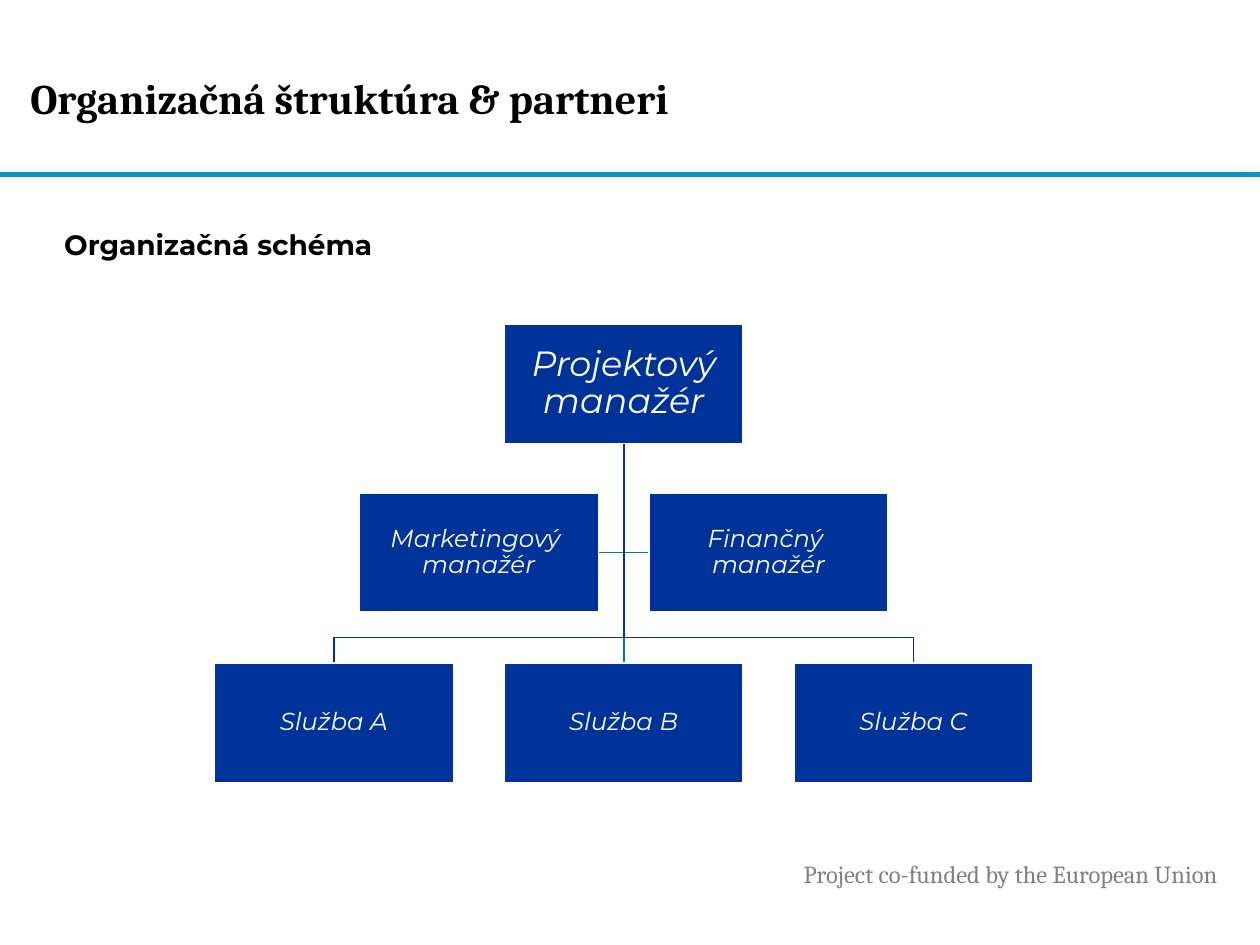
from dataclasses import dataclass

from lxml.etree import SubElement
from pptx import Presentation
from pptx.dml.color import RGBColor
from pptx.enum.shapes import MSO_CONNECTOR, MSO_SHAPE
from pptx.enum.text import MSO_ANCHOR, PP_ALIGN
from pptx.oxml.ns import qn
from pptx.util import Inches, Pt


@dataclass(frozen=True)
class Theme:
    serif: str = "Cambria"
    sans: str = "Montserrat"
    black: str = "000000"
    white: str = "FFFFFF"
    grey: str = "808080"
    navy: str = "003399"
    teal: str = "0078A9"
    rule_fill: str = "0C94B7"
    rule_line: str = "0096D3"
    title_size: int = 24
    lead_size: int = 20
    heading_size: int = 16
    text_size: int = 14


THEME = Theme()
NODE_WIDTH, NODE_HEIGHT = 1.9, 0.95
CENTER = 4.95
COLUMN_STEP = 2.3
LEAD_TOP, MANAGER_TOP, SERVICE_TOP = 2.57, 3.91, 5.26
LEAD_BOTTOM = LEAD_TOP + NODE_HEIGHT
BUS_Y = 5.06


def color(value):
    return RGBColor.from_string(value)


def style_text(frame, font, size, text_color, bold=False, italic=False):
    for para in frame.paragraphs:
        for span in para.runs:
            span.font.name = font
            span.font.size = Pt(size)
            span.font.color.rgb = color(text_color)
            span.font.bold = bold
            span.font.italic = italic


def set_margins(frame, horizontal, vertical):
    frame.margin_left = frame.margin_right = Inches(horizontal)
    frame.margin_top = frame.margin_bottom = Inches(vertical)


def set_line(shape, line_color):
    shape.line.color.rgb = color(line_color)
    shape.line.width = Pt(1)


def add_title(slide, text):
    title = slide.shapes.title
    title.left, title.top = Inches(0.24), Inches(0.18)
    title.width, title.height = Inches(7.54), Inches(1.19)
    frame = title.text_frame
    frame.text = text
    frame.vertical_anchor = MSO_ANCHOR.MIDDLE
    set_margins(frame, 0, 0)
    frame.paragraphs[0].alignment = PP_ALIGN.LEFT
    style_text(frame, THEME.serif, THEME.title_size, THEME.black, bold=True)


def add_text(slide, text, left, top, width, height):
    box = slide.shapes.add_textbox(Inches(left), Inches(top), Inches(width), Inches(height))
    box.text_frame.word_wrap = True
    box.text_frame.text = text
    return box.text_frame


def add_rectangle(slide, left, top, width, height, fill, line):
    box = slide.shapes.add_shape(
        MSO_SHAPE.RECTANGLE, Inches(left), Inches(top), Inches(width), Inches(height))
    box.shadow.inherit = False
    box.fill.solid()
    box.fill.fore_color.rgb = color(fill)
    set_line(box, line)
    return box


def add_node(slide, text, center, top, size=THEME.text_size):
    """Add one chart box, centred on the given x position."""
    box = add_rectangle(slide, center - NODE_WIDTH / 2, top, NODE_WIDTH, NODE_HEIGHT,
                        THEME.navy, THEME.white)
    frame = box.text_frame
    frame.word_wrap = True
    frame.vertical_anchor = MSO_ANCHOR.MIDDLE
    set_margins(frame, 0.01, 0.01)
    frame.text = text
    for para in frame.paragraphs:
        para.alignment = PP_ALIGN.CENTER
        para.line_spacing = 0.9
    style_text(frame, THEME.sans, size, THEME.white, italic=True)


def add_branch(slide, points, line_color):
    """Draw an open angled line through the points."""
    start, *rest = [(Inches(x), Inches(y)) for x, y in points]
    builder = slide.shapes.build_freeform(*start)
    builder.add_line_segments(rest, close=False)
    branch = builder.convert_to_shape()
    branch.shadow.inherit = False
    branch.fill.background()
    set_line(branch, line_color)


def add_stem(slide):
    stem = slide.shapes.add_connector(
        MSO_CONNECTOR.STRAIGHT, Inches(CENTER), Inches(LEAD_BOTTOM),
        Inches(CENTER), Inches(SERVICE_TOP))
    set_line(stem, THEME.teal)
    SubElement(stem._element.spPr, qn("a:effectLst"))


def add_service_branch(slide, side):
    x = CENTER + side * COLUMN_STEP
    add_branch(slide, [(CENTER, LEAD_BOTTOM), (CENTER, BUS_Y), (x, BUS_Y), (x, SERVICE_TOP)],
               THEME.navy)


def add_organization_chart(slide):
    manager_offset = COLUMN_STEP / 2
    manager_middle = MANAGER_TOP + NODE_HEIGHT / 2
    for side in (1, -1):
        inner_edge = CENTER + side * (manager_offset - NODE_WIDTH / 2)
        add_branch(slide, [(CENTER, LEAD_BOTTOM), (CENTER, manager_middle),
                           (inner_edge, manager_middle)], THEME.teal)
    add_service_branch(slide, 1)
    add_stem(slide)
    add_service_branch(slide, -1)

    add_node(slide, "Projektový manažér", CENTER, LEAD_TOP, THEME.lead_size)
    for side, name in zip((-1, 0, 1), "ABC"):
        add_node(slide, f"Služba {name}", CENTER + side * COLUMN_STEP, SERVICE_TOP)
    add_node(slide, "Marketingový \vmanažér", CENTER - manager_offset, MANAGER_TOP)
    add_node(slide, "Finančný \nmanažér", CENTER + manager_offset, MANAGER_TOP)


def main():
    deck = Presentation()
    deck.slide_width, deck.slide_height = Inches(10), Inches(7.5)
    slide = deck.slides.add_slide(deck.slide_layouts[5])

    add_title(slide, "Organizačná štruktúra & partneri")
    add_rectangle(slide, 0, 1.37, 10, 0.03, THEME.rule_fill, THEME.rule_line)

    footer = add_text(slide, "Project co-funded by the European Union", 6.28, 6.77, 3.66, 0.34)
    style_text(footer, THEME.serif, THEME.text_size, THEME.grey)

    heading = add_text(slide, "Organizačná schéma", 0.51, 1.76, 8.49, 5.06)
    set_margins(heading, 0, 0.05)
    style_text(heading, THEME.sans, THEME.heading_size, THEME.black, bold=True)

    add_organization_chart(slide)
    deck.save("out.pptx")


if __name__ == "__main__":
    main()
